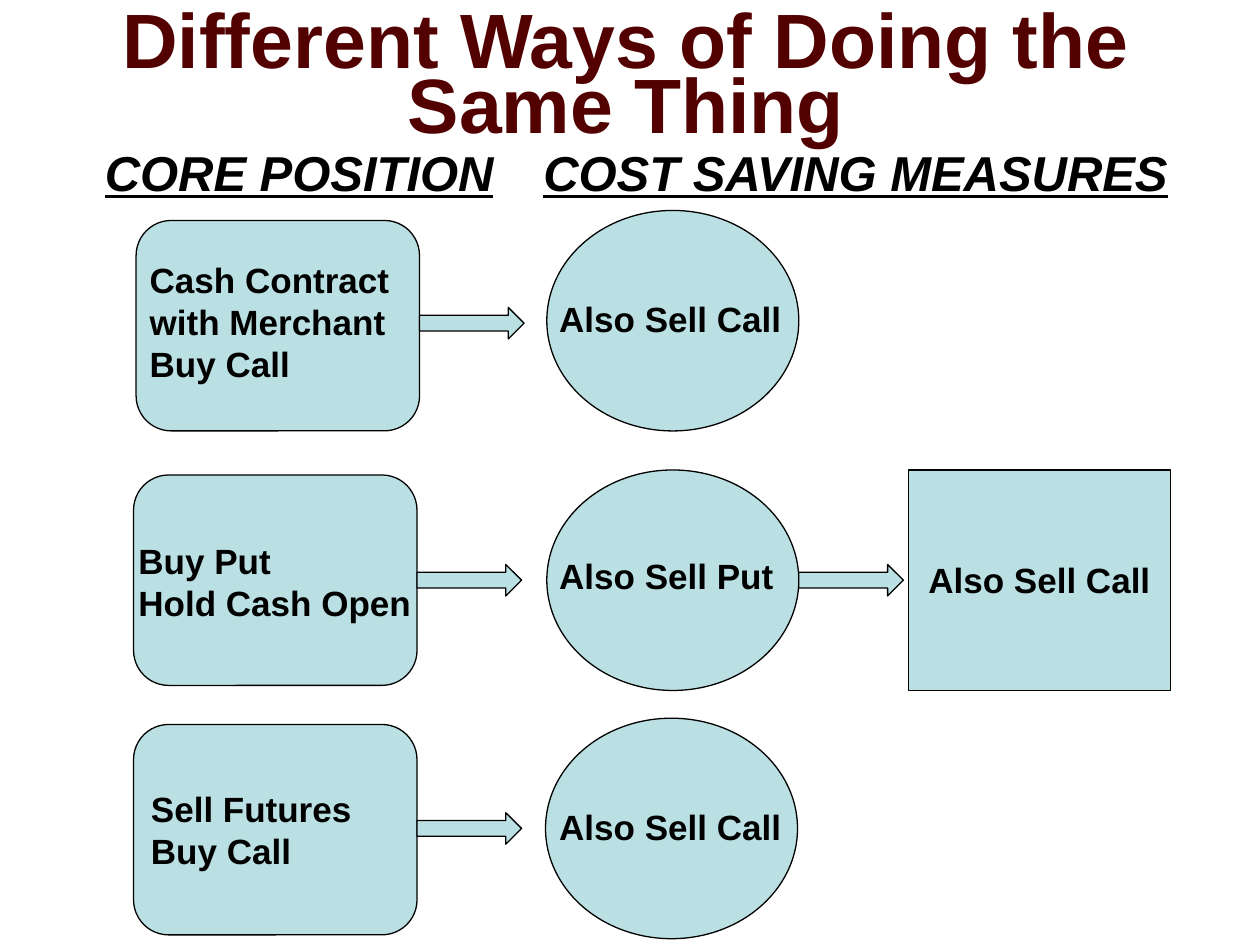
from typing import NamedTuple

from pptx import Presentation
from pptx.dml.color import RGBColor
from pptx.enum.shapes import MSO_SHAPE as Shape
from pptx.enum.text import MSO_ANCHOR as Anchor, PP_ALIGN as Align
from pptx.util import Inches, Pt

COLORS = {"title": "520000", "text": "000000", "fill": "BBE0E3", "line": "000000"}


class Node(NamedTuple):
    kind: Shape
    left: float
    top: float
    width: float
    height: float


class Label(NamedTuple):
    lines: tuple[str, ...]
    left: float
    top: float
    width: float
    height: float


def position(left: float, top: float) -> Node:
    return Node(Shape.ROUNDED_RECTANGLE, left, top, 2.25, 1.67)


def arrow(left: float, top: float) -> Node:
    return Node(Shape.RIGHT_ARROW, left, top, 0.83, 0.25)


def measure(left: float, top: float) -> Node:
    return Node(Shape.OVAL, left, top, 2, 1.75)


def measure_label(text: str, left: float, top: float) -> Label:
    return Label((text,), left, top, 2.23, 0.44)


NODES = [
    position(1.08, 1.75), position(1.06, 3.77), position(1.06, 5.75),
    arrow(3.33, 2.44), arrow(3.31, 4.48), arrow(3.31, 6.45),
    measure(4.34, 1.67), measure(4.34, 3.73), measure(4.33, 5.7),
    arrow(6.34, 4.48),
    Node(Shape.RECTANGLE, 7.21, 3.73, 2.08, 1.75),
]
TITLE = Label(("Different Ways of Doing the Same Thing",), 0.5, 0.08, 8.94, 1.14)
LABELS = [
    Label(("Buy Put", "Hold Cash Open"), 1, 4.23, 2.42, 0.77),
    Label(("Cash Contract with Merchant", "Buy Call"), 1.09, 2, 2.23, 1.11),
    Label(("Sell Futures", "Buy Call"), 1.1, 6.2, 2.23, 0.77),
    measure_label("Also Sell Put", 4.34, 4.35),
    measure_label("Also Sell Call", 7.27, 4.38),
    measure_label("Also Sell Call", 4.34, 6.34),
    measure_label("Also Sell Call", 4.34, 2.31),
]
HEADINGS = [
    Label(("CORE POSITION",), 0.41, 1.08, 3.93, 0.57),
    Label(("COST SAVING MEASURES",), 4.08, 1.08, 5.42, 0.57),
]


def color(name: str) -> RGBColor:
    return RGBColor.from_string(COLORS[name])


def draw_node(slide, node: Node) -> None:
    shape = slide.shapes.add_shape(node.kind, *map(Inches, node[1:]))
    shape.shadow.inherit = False
    shape.fill.solid()
    shape.fill.fore_color.rgb = color("fill")
    shape.line.color.rgb = color("line")
    shape.line.width = Pt(0.75)


def draw_label(slide, label: Label, size: int = 20, color_name: str = "text",
               align: Align = Align.LEFT, anchor: Anchor = Anchor.TOP,
               spacing: float = 1.0, heading: bool = False) -> None:
    """Write one paragraph per line; a heading is italic and underlined."""
    frame = slide.shapes.add_textbox(*map(Inches, label[1:])).text_frame
    frame.word_wrap = True
    frame.vertical_anchor = anchor
    frame.text = "\n".join(label.lines)
    for paragraph in frame.paragraphs:
        paragraph.alignment = align
        paragraph.line_spacing = spacing
        font = paragraph.font
        font.name = "Arial"
        font.size = Pt(size)
        font.bold = True
        font.italic = font.underline = heading
        font.color.rgb = color(color_name)


def main() -> None:
    deck = Presentation()
    deck.slide_width, deck.slide_height = Inches(10), Inches(7.5)
    slide = deck.slides.add_slide(deck.slide_layouts[6])

    draw_label(slide, TITLE, 44, "title", Align.CENTER, Anchor.MIDDLE, spacing=0.7)
    for node in NODES:
        draw_node(slide, node)
    for label in LABELS:
        draw_label(slide, label)
    for label in HEADINGS:
        draw_label(slide, label, 28, align=Align.CENTER, heading=True)

    deck.save("out.pptx")


if __name__ == "__main__":
    main()
